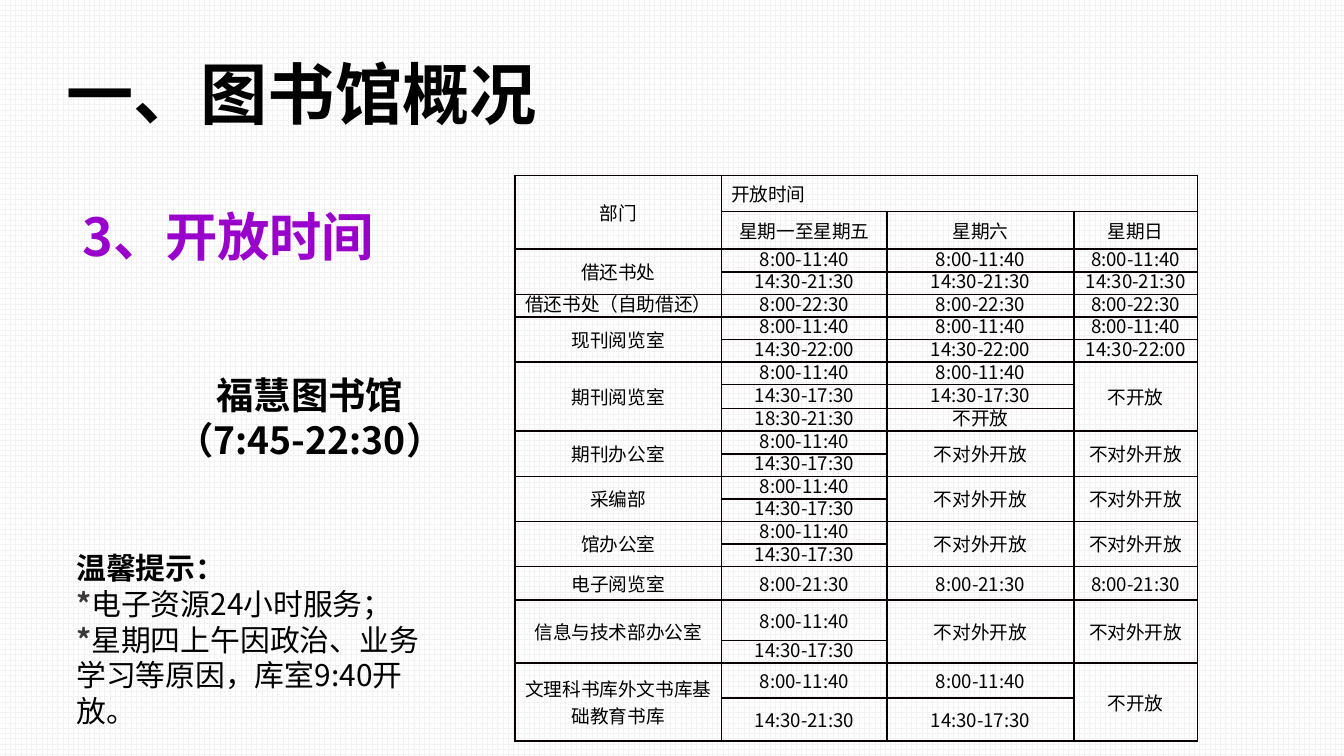
import dataclasses

import lxml.etree
import pptx
import pptx.dml.color
import pptx.enum.dml
import pptx.enum.text
import pptx.oxml.ns
import pptx.util

ALIGN = pptx.enum.text.PP_ALIGN
MIDDLE = pptx.enum.text.MSO_ANCHOR.MIDDLE
GROW = pptx.enum.text.MSO_AUTO_SIZE.SHAPE_TO_FIT_TEXT
qn = pptx.oxml.ns.qn


@dataclasses.dataclass(frozen=True)
class Theme:
    font: str = "Noto Sans CJK SC"
    ink: str = "000000"
    accent: str = "9900CC"
    star: str = "3A3838"
    border: str = "080000"
    grid: str = "F2F2F2"
    paper: str = "FFFFFF"
    title: int = 36
    heading: int = 28
    library: int = 20
    notice: int = 16
    cell: int = 10
    tight_line: int = 12


class Deck:
    COLS, ROWS = 100, 56.25

    def __init__(self, theme):
        self.theme = theme
        self.prs = pptx.Presentation()
        self.prs.slide_width = pptx.util.Inches(10)
        self.prs.slide_height = pptx.util.Inches(10 * 9 / 16)
        self.s = self.prs.slides.add_slide(self.prs.slide_layouts[6])

    def col(self, n):
        return round(self.prs.slide_width * n / self.COLS)

    def row(self, n):
        return round(self.prs.slide_height * n / self.ROWS)

    def rgb(self, value):
        return pptx.dml.color.RGBColor.from_string(value)

    def background(self):
        fill = self.s.background.fill
        fill.patterned()
        fill.pattern = pptx.enum.dml.MSO_PATTERN.CROSS
        fill.fore_color.rgb = self.rgb(self.theme.grid)
        fill.back_color.rgb = self.rgb(self.theme.paper)

    def run(self, p, text, size, color=None, bold=False):
        r = p.add_run()
        r.text = text
        style = {"size": pptx.util.Pt(size), "bold": bold, "name": self.theme.font}
        r.font.color.rgb = self.rgb(color or self.theme.ink)
        for key, value in style.items():
            setattr(r.font, key, value)
        lxml.etree.SubElement(r.font._element, qn("a:ea"), typeface=self.theme.font)

    def text(self, box, paragraphs, size, align=ALIGN.LEFT, **frame):
        x, y, w, h = box
        sp = self.s.shapes.add_textbox(self.col(x), self.row(y), self.col(w), self.row(h))
        tf = sp.text_frame
        for key, value in {"word_wrap": True, **frame}.items():
            setattr(tf, key, value)
        for i, runs in enumerate(paragraphs):
            p = tf.add_paragraph() if i else tf.paragraphs[0]
            p.alignment = align
            for text, style in runs:
                self.run(p, text, size, **style)

    def border(self, cell):
        tc_pr = cell._tc.get_or_add_tcPr()
        for i, side in enumerate("LRTB"):
            ln = lxml.etree.Element(qn("a:ln" + side), w=str(pptx.util.Pt(1)))
            fill = lxml.etree.SubElement(ln, qn("a:solidFill"))
            lxml.etree.SubElement(fill, qn("a:srgbClr"), val=self.theme.border)
            tc_pr.insert(i, ln)

    def table(self, x, y, widths, heights, data):
        tbl = self.s.shapes.add_table(
            len(data), len(widths), self.col(x), self.row(y),
            self.col(sum(widths)), self.row(sum(heights))).table
        tbl.first_row = tbl.horz_banding = False
        for c, width in enumerate(widths):
            tbl.columns[c].width = self.col(width)
        for i, values in enumerate(data):
            tbl.rows[i].height = self.row(heights[i])
            for j, value in enumerate(values):
                self.cell(tbl, data, i, j, value, heights[i])

    def cell(self, tbl, data, i, j, value, height):
        cell = tbl.cell(i, j)
        side = self.col(0.7)
        style = {"margin_left": side, "margin_right": side, "margin_top": 0,
                 "margin_bottom": 0, "vertical_anchor": MIDDLE}
        for key, item in style.items():
            setattr(cell, key, item)
        cell.fill.background()
        self.border(cell)
        if value in (UP, BACK):
            return
        last_row, last_col = i, j
        while last_row + 1 < len(data) and data[last_row + 1][j] == UP:
            last_row += 1
        while last_col + 1 < len(data[i]) and data[i][last_col + 1] == BACK:
            last_col += 1
        if (last_row, last_col) != (i, j):
            cell.merge(tbl.cell(last_row, last_col))
        p = cell.text_frame.paragraphs[0]
        p.alignment = ALIGN.LEFT if last_col > j else ALIGN.CENTER
        if last_row == i and height < 2:
            p.line_spacing = pptx.util.Pt(self.theme.tight_line)
        self.run(p, value, self.theme.cell)


UP, BACK = "^", "<"
MORNING, AFTERNOON, EVENING = "8:00-11:40", "14:30-17:30", "14:30-21:30"
LATE, ALL_DAY, ONLINE = "14:30-22:00", "8:00-22:30", "8:00-21:30"
CLOSED, STAFF = "不开放", "不对外开放"


def office(name):
    return [[name, MORNING, STAFF, STAFF], [UP, AFTERNOON, UP, UP]]


HOURS = [
    ["部门", "开放时间", BACK, BACK],
    [UP, "星期一至星期五", "星期六", "星期日"],
    ["借还书处"] + [MORNING] * 3,
    [UP] + [EVENING] * 3,
    ["借还书处（自助借还）"] + [ALL_DAY] * 3,
    ["现刊阅览室"] + [MORNING] * 3,
    [UP] + [LATE] * 3,
    ["期刊阅览室", MORNING, MORNING, CLOSED],
    [UP, AFTERNOON, AFTERNOON, UP],
    [UP, "18:30-21:30", CLOSED, UP],
    *office("期刊办公室"),
    *office("采编部"),
    *office("馆办公室"),
    ["电子阅览室"] + [ONLINE] * 3,
    *office("信息与技术部办公室"),
    ["文理科书库外文书库基础教育书库", MORNING, MORNING, CLOSED],
    [UP, EVENING, AFTERNOON, UP],
]
WIDTHS = [15.4, 12.3, 13.9, 9.2]
HEIGHTS = [2.7, 2.8] + [1.68] * 6 + [1.8] + [1.68] * 7 + [2.5, 3, 1.7, 2.6, 3.2]


def main():
    theme = Theme()
    deck = Deck(theme)
    deck.background()
    bold = {"bold": True}
    star = ("*", {"bold": True, "color": theme.star})
    deck.text((3.95, 3.35, 90, 7.1), [[("一、图书馆概况", bold)]],
              theme.title, vertical_anchor=MIDDLE)
    deck.text((5.15, 14.7, 27.7, 5.7),
              [[("3、开放时间", {"bold": True, "color": theme.accent})]],
              theme.heading, auto_size=GROW)
    deck.text((10.25, 27.2, 25.6, 7.8),
              [[("福慧图书馆", bold)], [("（7:45-22:30）", bold)]],
              theme.library, ALIGN.CENTER, auto_size=GROW)
    deck.table(38.3, 13.05, WIDTHS, HEIGHTS, HOURS)
    deck.text((4.7, 40.4, 28.1, 11.8), [
        [("温馨提示：", bold)],
        [star, ("电子资源24小时服务；", {})],
        [star, ("星期四上午因政治、业务学习等原因，库室9:40开放。", {})],
    ], theme.notice, auto_size=GROW)
    deck.prs.save("out.pptx")


if __name__ == "__main__":
    main()
